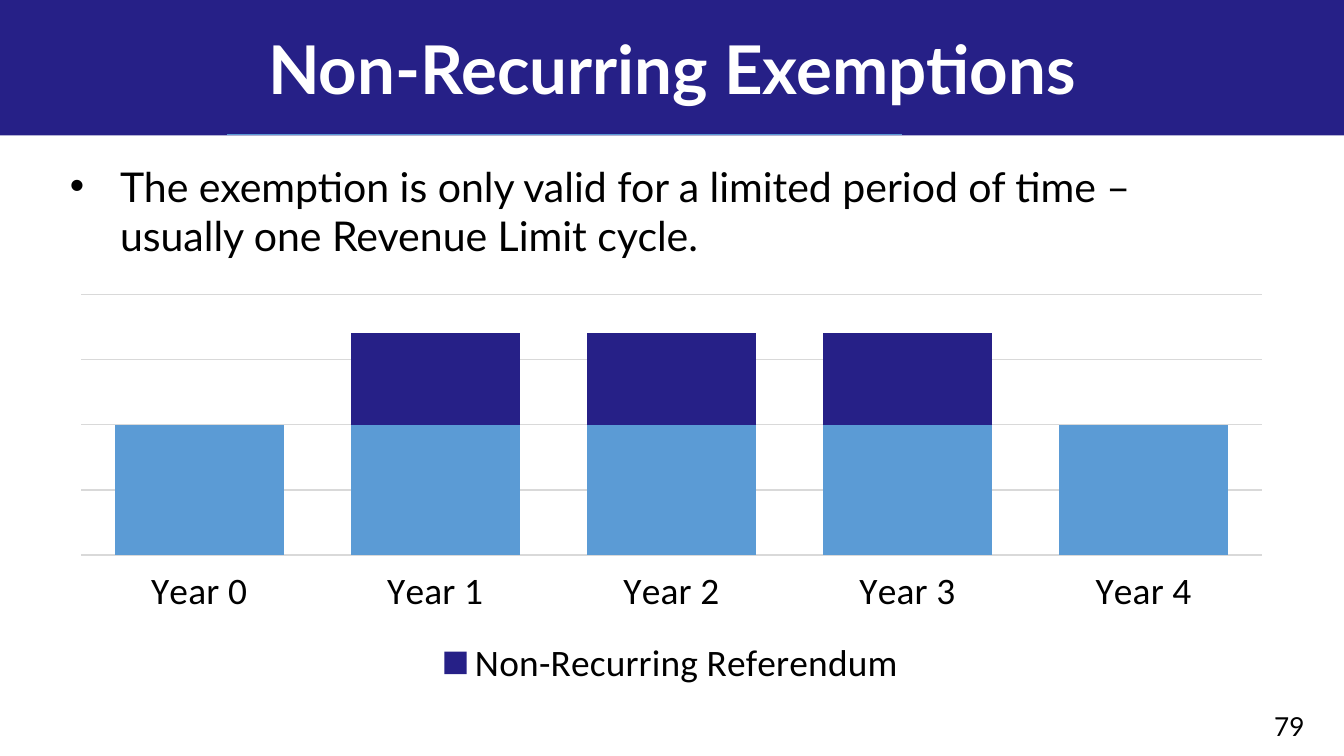
from lxml import etree
from pptx import Presentation
from pptx.chart.data import CategoryChartData
from pptx.dml.color import RGBColor
from pptx.enum.chart import XL_CHART_TYPE, XL_LEGEND_POSITION, XL_TICK_LABEL_POSITION, XL_TICK_MARK
from pptx.enum.shapes import MSO_CONNECTOR, MSO_SHAPE
from pptx.enum.text import MSO_ANCHOR, MSO_AUTO_SIZE, PP_ALIGN
from pptx.oxml.ns import qn
from pptx.util import Cm, Pt

NAVY = RGBColor(0x26, 0x20, 0x87)
BLUE = RGBColor(0x5B, 0x9B, 0xD5)
GREY = RGBColor(0xD9, 0xD9, 0xD9)
BLACK = RGBColor(0, 0, 0)
WHITE = RGBColor(0xFF, 0xFF, 0xFF)

STACKED = XL_CHART_TYPE.COLUMN_STACKED
BOTTOM = XL_LEGEND_POSITION.BOTTOM
NO_TICKS = XL_TICK_MARK.NONE
LABELS_LOW = XL_TICK_LABEL_POSITION.LOW
STRAIGHT = MSO_CONNECTOR.STRAIGHT
RECTANGLE = MSO_SHAPE.RECTANGLE
MIDDLE = MSO_ANCHOR.MIDDLE
NO_AUTOFIT = MSO_AUTO_SIZE.NONE
CENTER = PP_ALIGN.CENTER


class SlideBuilder:
    def __init__(self, slide):
        self.s = slide
        self.text_font = "Lato"
        self.chart_font = "Calibri"

    def set_font(self, font, size, color, name, bold=False):
        font.size, font.name, font.bold = Pt(size), name, bold
        font.color.rgb = color

    def band(self, x, y, w, h):
        sp = self.s.shapes.add_shape(RECTANGLE, Cm(x), Cm(y), Cm(w), Cm(h))
        sp.shadow.inherit = False
        sp.fill.solid()
        sp.fill.fore_color.rgb = NAVY
        sp.line.fill.background()
        return sp

    def rule(self, x1, x2, y):
        line = self.s.shapes.add_connector(STRAIGHT, Cm(x1), Cm(y), Cm(x2), Cm(y))
        line.line.color.rgb = BLUE
        line.line.width = Pt(0.5)
        etree.SubElement(line.element.spPr, qn("a:effectLst"))
        return line

    def title(self, text, x, y, w, h, behind):
        """Fill the title placeholder and stack it just above the shape behind."""
        sp = self.s.shapes.title
        sp.left, sp.top, sp.width, sp.height = Cm(x), Cm(y), Cm(w), Cm(h)
        tf = sp.text_frame
        tf.text = text
        tf.auto_size = NO_AUTOFIT
        tf.vertical_anchor = MIDDLE
        p = tf.paragraphs[0]
        p.alignment = CENTER
        p.space_after = Pt(30)
        self.set_font(p.font, 36, WHITE, self.text_font, bold=True)
        behind.element.addnext(sp.element)

    def text(self, lines, x, y, w, h, size):
        tf = self.s.shapes.add_textbox(Cm(x), Cm(y), Cm(w), Cm(h)).text_frame
        tf.word_wrap = True
        p = tf.paragraphs[0]
        for i, line in enumerate(lines):
            if i:
                p.add_line_break()
            p.add_run().text = line
        self.set_font(p.font, size, BLACK, self.text_font)
        return p

    def bullet(self, lines, x, y, w, h, size):
        p = self.text(lines, x, y, w, h, size)
        p.space_after = Pt(4.5)
        pPr = p._p.get_or_add_pPr()
        indent = Cm(0.95)
        pPr.set("marL", str(indent))
        pPr.set("indent", str(-indent))
        font = etree.Element(qn("a:buFont"), typeface="Arial")
        char = etree.Element(qn("a:buChar"), char="•")
        pPr.find(qn("a:spcAft")).addnext(font)
        font.addnext(char)

    def stacked_columns(self, categories, series, x, y, w, h):
        """Draw series given as (name, values, colour); only the last is in the legend."""
        data = CategoryChartData()
        data.categories = categories
        for name, values, _ in series:
            data.add_series(name, values)
        chart = self.s.shapes.add_chart(STACKED, Cm(x), Cm(y), Cm(w), Cm(h), data).chart
        chart.has_title = False
        self.set_font(chart.font, 20, BLACK, self.chart_font)

        plot = chart.plots[0]
        plot.gap_width, plot.overlap = 40, 100
        plot.vary_by_categories = False
        for ser, (_, _, color) in zip(plot.series, series):
            ser.format.fill.solid()
            ser.format.fill.fore_color.rgb = color

        cat_axis, val_axis = chart.category_axis, chart.value_axis
        cat_axis.major_tick_mark = cat_axis.minor_tick_mark = NO_TICKS
        cat_axis.tick_label_position = LABELS_LOW
        val_axis.visible = False
        val_axis.minimum_scale, val_axis.maximum_scale = 0, 200
        val_axis.major_unit = 50
        val_axis.has_major_gridlines = True
        for fmt in (cat_axis.format, val_axis.major_gridlines.format):
            fmt.line.color.rgb = GREY
            fmt.line.width = Pt(0.75)

        chart.has_legend = True
        legend = chart.legend
        legend.position = BOTTOM
        legend.include_in_layout = False
        previous = legend._element.find(qn("c:legendPos"))
        for i in range(len(series) - 1):
            entry = etree.Element(qn("c:legendEntry"))
            etree.SubElement(entry, qn("c:idx"), val=str(i))
            etree.SubElement(entry, qn("c:delete"), val="1")
            previous.addnext(entry)
            previous = entry


def main():
    prs = Presentation()
    prs.slide_width, prs.slide_height = Cm(25.4), Cm(14.29)
    title_only = prs.slide_layouts[5]
    b = SlideBuilder(prs.slides.add_slide(title_only))

    band = b.band(0, 0, 25.4, 2.56)
    b.title("Non-Recurring Exemptions", 0, 0, 25.4, 2.56, behind=band)
    b.rule(4.29, 17.04, 2.54)
    b.bullet(["The exemption is only valid for a limited period of time – ",
              "usually one Revenue Limit cycle."], 1.07, 2.92, 22.76, 2.13, 22)
    b.stacked_columns([f"Year {n}" for n in range(5)],
                      [("Series 1", [100] * 5, BLUE),
                       ("Non-Recurring Referendum", [0, 70, 70, 70, 0], NAVY)],
                      1.07, 5.41, 23.24, 7.7)
    b.text(["79"], 23.83, 13.31, 1.4, 0.64, 14)
    prs.save("out.pptx")


if __name__ == "__main__":
    main()
